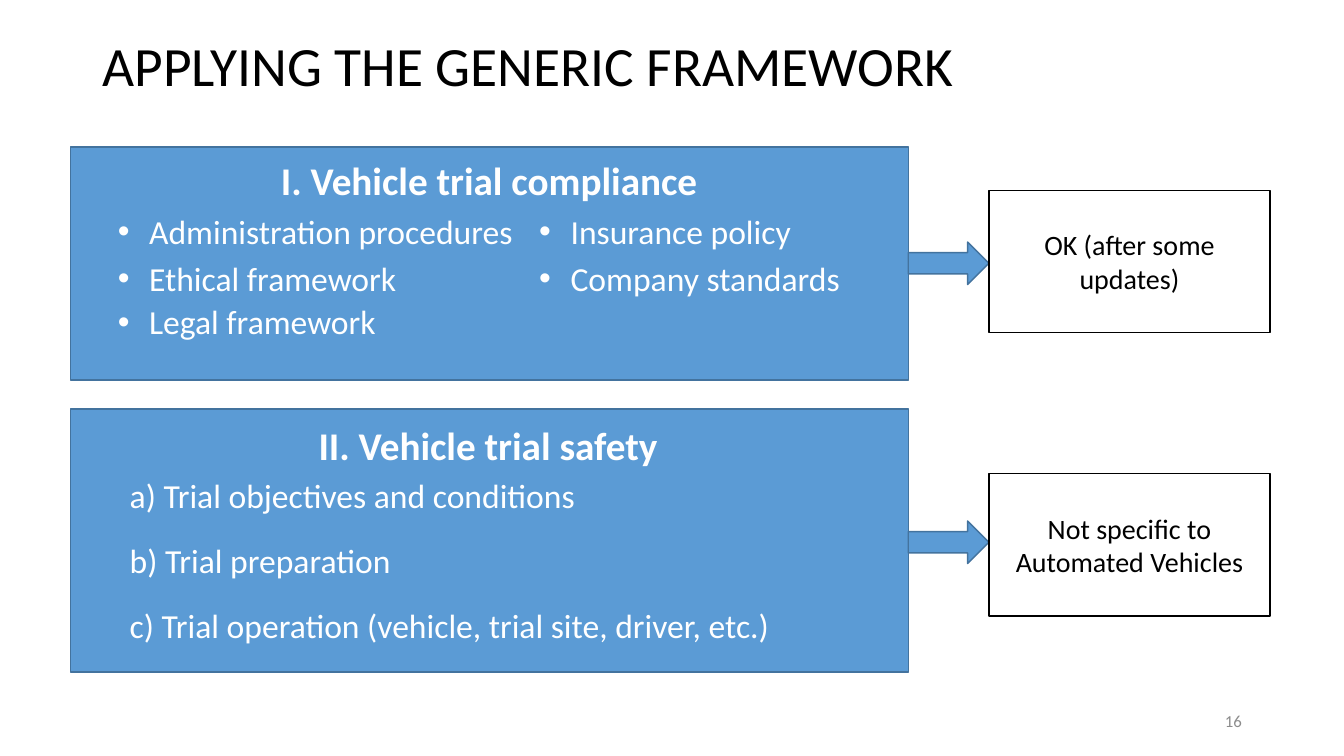
from lxml.etree import SubElement
from pptx import Presentation
from pptx.dml.color import RGBColor
from pptx.enum.shapes import MSO_SHAPE
from pptx.enum.text import MSO_ANCHOR, PP_ALIGN
from pptx.oxml.ns import qn
from pptx.util import Cm, Pt

BLUE = RGBColor(0x5B, 0x9B, 0xD5)
EDGE = RGBColor(0x43, 0x73, 0x9E)
WHITE = RGBColor(0xFF, 0xFF, 0xFF)
BLACK = RGBColor(0, 0, 0)
GREY = RGBColor(0x8C, 0x8C, 0x8C)

LEFT, WIDTH = 1.78, 21.11
ARROW_W, ARROW_H = 2.03, 1.07
RESULT_W, RESULT_H = 7.09, 3.58
LINE_H = 1.28


def write(frame, text, size=24, color=WHITE, bold=False,
          align=PP_ALIGN.LEFT, anchor=MSO_ANCHOR.TOP, bullet=False, space=1.0):
    frame.word_wrap = True
    frame.vertical_anchor = anchor
    para = frame.paragraphs[0]
    para.alignment = align
    para.line_spacing = space
    run = para.add_run()
    run.text = text
    font = run.font
    font.name, font.size, font.bold = "Calibri", Pt(size), bold
    font.color.rgb = color
    if bullet:
        props = para._p.get_or_add_pPr()
        props.set("marL", str(Cm(0.79)))
        props.set("indent", str(-Cm(0.79)))
        SubElement(props, qn("a:buFont")).set("typeface", "Arial")
        SubElement(props, qn("a:buChar")).set("char", "•")


def label(slide, box, text, **style):
    area = slide.shapes.add_textbox(*map(Cm, box))
    write(area.text_frame, text, **style)


def block(slide, kind, box, fill, edge):
    shape = slide.shapes.add_shape(kind, *map(Cm, box))
    shape.shadow.inherit = False
    shape.fill.solid()
    shape.fill.fore_color.rgb = fill
    shape.line.color.rgb = edge
    shape.line.width = Pt(1)
    return shape


def panel(slide, box, title, head):
    """Draw a blue panel; head is the title's box relative to the panel."""
    left, top = box[:2]
    block(slide, MSO_SHAPE.RECTANGLE, box, BLUE, EDGE)
    x, y, width = head
    label(slide, (left + x, top + y, width, 1.45), title,
          size=28, bold=True, align=PP_ALIGN.CENTER)


def compliance(slide, box):
    left, top = box[:2]
    panel(slide, box, "I. Vehicle trial compliance", (4.21, 0.1, 12.67))
    rows = (1.47, 2.67, 3.76)
    columns = (
        (0.94, 10.9, ("Administration procedures", "Ethical framework",
                      "Legal framework")),
        (11.56, 8.33, ("Insurance policy", "Company standards")),
    )
    for x, width, items in columns:
        for y, item in zip(rows, items):
            label(slide, (left + x, top + y, width, LINE_H), item, bullet=True)


def safety(slide, box):
    left, top = box[:2]
    panel(slide, box, "II. Vehicle trial safety", (3.99, 0.18, 13.06))
    items = ("a) Trial objectives and conditions", "b) Trial preparation",
             "c) Trial operation (vehicle, trial site, driver, etc.)")
    for i, item in enumerate(items):
        label(slide, (left + 1.24, top + 1.53 + 1.64 * i, 18.54, LINE_H), item)


def result(slide, box, text, drop):
    """Draw an arrow and, right of it, a result box; drop is the arrow's offset."""
    left, top, width, height = box
    block(slide, MSO_SHAPE.RIGHT_ARROW,
          (left, top + drop, ARROW_W, ARROW_H), BLUE, EDGE)
    shape = block(slide, MSO_SHAPE.RECTANGLE,
                  (left + ARROW_W, top, width - ARROW_W, height), WHITE, BLACK)
    write(shape.text_frame, text, size=20, color=BLACK,
          align=PP_ALIGN.CENTER, anchor=MSO_ANCHOR.MIDDLE)


def main():
    deck = Presentation()
    deck.slide_width, deck.slide_height = Cm(33.87), Cm(19.05)
    slide = deck.slides.add_slide(deck.slide_layouts[6])

    label(slide, (2.34, 1.02, 29.21, 1.42), "APPLYING THE GENERIC FRAMEWORK",
          size=39.6, color=BLACK, anchor=MSO_ANCHOR.MIDDLE, space=0.9)
    compliance(slide, (LEFT, 3.71, WIDTH, 5.87))
    safety(slide, (LEFT, 10.31, WIDTH, 6.63))

    results = ((4.8, "OK (after some updates)", 1.3),
               (11.94, "Not specific to Automated Vehicles", 1.19))
    for top, text, drop in results:
        result(slide, (LEFT + WIDTH, top, ARROW_W + RESULT_W, RESULT_H),
               text, drop)

    label(slide, (23.93, 17.65, 7.62, 1.02), "16", size=12, color=GREY,
          align=PP_ALIGN.RIGHT, anchor=MSO_ANCHOR.MIDDLE)
    deck.save("out.pptx")


if __name__ == "__main__":
    main()
